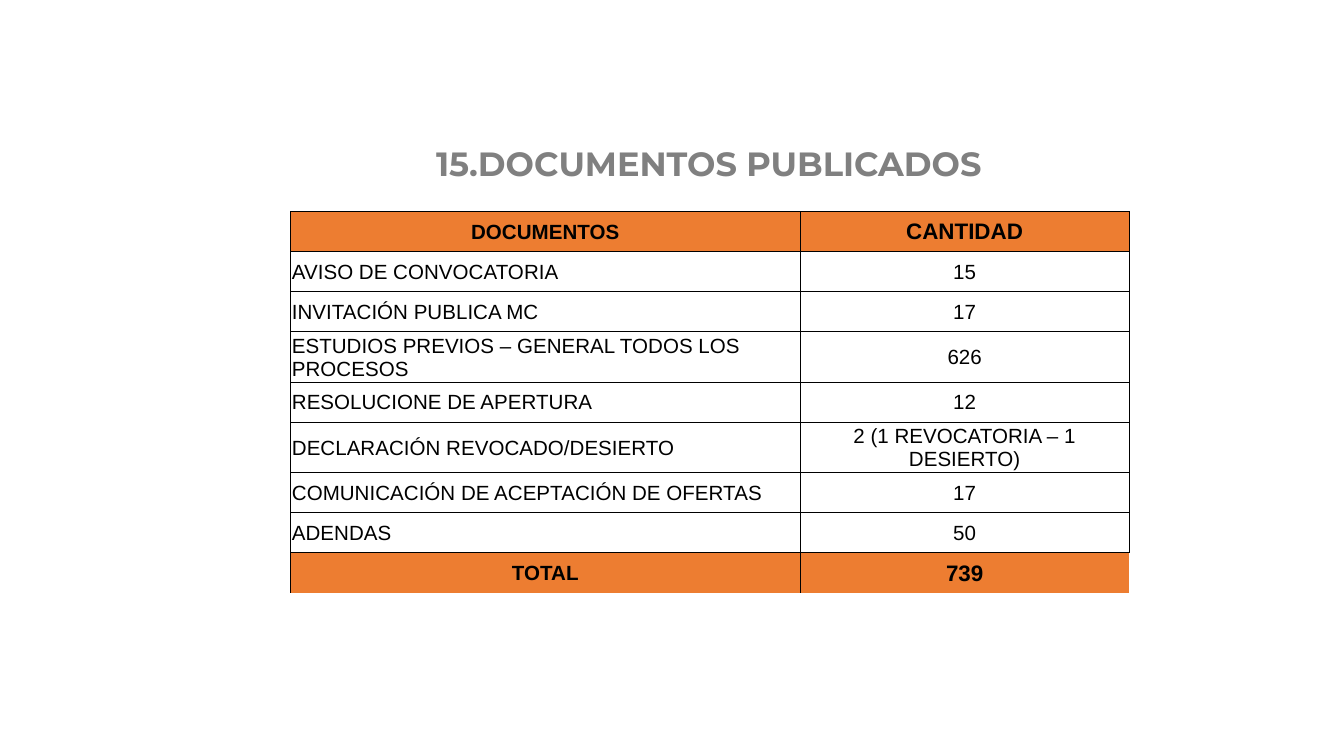
import pptx
import pptx.dml.color
import pptx.enum.text
import pptx.oxml
import pptx.oxml.ns
import pptx.util

Pt = pptx.util.Pt
ALIGN = pptx.enum.text.PP_ALIGN
MIDDLE = pptx.enum.text.MSO_ANCHOR.MIDDLE
ORANGE = "ED7D31"
BLACK = "000000"
ROW_HEIGHT = 21.45
COLUMN_WIDTHS = (272.9, 176.4)
ROWS = [
    ("DOCUMENTOS", "CANTIDAD"),
    ("AVISO DE CONVOCATORIA", "15"),
    ("INVITACIÓN PUBLICA MC", "17"),
    ("ESTUDIOS PREVIOS – GENERAL TODOS LOS PROCESOS", "626"),
    ("RESOLUCIONE DE APERTURA", "12"),
    ("DECLARACIÓN REVOCADO/DESIERTO", "2 (1 REVOCATORIA – 1 DESIERTO)"),
    ("COMUNICACIÓN DE ACEPTACIÓN DE OFERTAS", "17"),
    ("ADENDAS", "50"),
    ("TOTAL", "739"),
]


def color(value):
    """Return the colour of a hex string."""
    return pptx.dml.color.RGBColor.from_string(value)


def set_values(target, values):
    """Set the attributes of an object from a dict."""
    for name, value in values.items():
        setattr(target, name, value)


def write_text(text_frame, text, alignment, font_name, size, bold, font_color):
    """Write one formatted paragraph."""
    paragraph = text_frame.paragraphs[0]
    paragraph.alignment = alignment
    run = paragraph.add_run()
    run.text = text
    set_values(run.font, {"name": font_name, "size": Pt(size), "bold": bold})
    run.font.color.rgb = color(font_color)


def add_borders(cell, visible_sides):
    """Draw the visible sides of a cell and hide the others."""
    properties = cell._tc.get_or_add_tcPr()
    namespace = pptx.oxml.ns.nsdecls("a")
    for side in "LRTB":
        paint = "<a:noFill/>"
        if side in visible_sides:
            paint = f'<a:solidFill><a:srgbClr val="{BLACK}"/></a:solidFill>'
        properties.append(pptx.oxml.parse_xml(
            f'<a:ln{side} {namespace} w="{Pt(0.5)}">{paint}</a:ln{side}>'))


def format_cell(cell, text, alignment, size, emphasized, visible_sides):
    """Fill, border and write one table cell."""
    set_values(cell, {
        "margin_left": Pt(0.7), "margin_right": Pt(0.7),
        "margin_top": Pt(0.7), "margin_bottom": 0,
        "vertical_anchor": MIDDLE,
    })
    add_borders(cell, visible_sides)
    if emphasized:
        cell.fill.solid()
        cell.fill.fore_color.rgb = color(ORANGE)
    else:
        cell.fill.background()
    write_text(cell.text_frame, text, alignment, "Arial", size, emphasized, BLACK)


def add_document_table(slide):
    """Add the table of published documents and their counts."""
    shape = slide.shapes.add_table(
        len(ROWS), len(COLUMN_WIDTHS), Pt(155.7), Pt(113.3),
        Pt(sum(COLUMN_WIDTHS)), Pt(ROW_HEIGHT * len(ROWS)))
    table = shape.table
    set_values(table, {"first_row": False, "horz_banding": False})
    for column, width in zip(table.columns, COLUMN_WIDTHS):
        column.width = Pt(width)
    last_row = len(ROWS) - 1
    for row_index, texts in enumerate(ROWS):
        table.rows[row_index].height = Pt(ROW_HEIGHT)
        emphasized = row_index in (0, last_row)
        for column_index, text in enumerate(texts):
            centered = emphasized or column_index == 1
            sides = "LRTB"
            if row_index == last_row:
                sides = ("LRT", "LT")[column_index]
            format_cell(
                table.cell(row_index, column_index), text,
                ALIGN.CENTER if centered else ALIGN.LEFT,
                12 if emphasized and column_index == 1 else 11,
                emphasized, sides)


def format_title(title, text):
    """Place and write the slide title."""
    set_values(title, {"left": Pt(224.6), "top": Pt(72.7),
                       "width": Pt(310.3), "height": Pt(28.8)})
    set_values(title.text_frame, {
        "word_wrap": False, "vertical_anchor": MIDDLE,
        "auto_size": pptx.enum.text.MSO_AUTO_SIZE.SHAPE_TO_FIT_TEXT})
    write_text(title.text_frame, text, ALIGN.CENTER, "Montserrat", 18, True, "808080")


def main():
    """Build and save the slide."""
    presentation = pptx.Presentation()
    set_values(presentation, {"slide_width": Pt(720), "slide_height": Pt(405)})
    slide = presentation.slides.add_slide(presentation.slide_layouts[5])
    add_document_table(slide)
    format_title(slide.shapes.title, "15.DOCUMENTOS PUBLICADOS")
    presentation.save("out.pptx")


if __name__ == "__main__":
    main()
